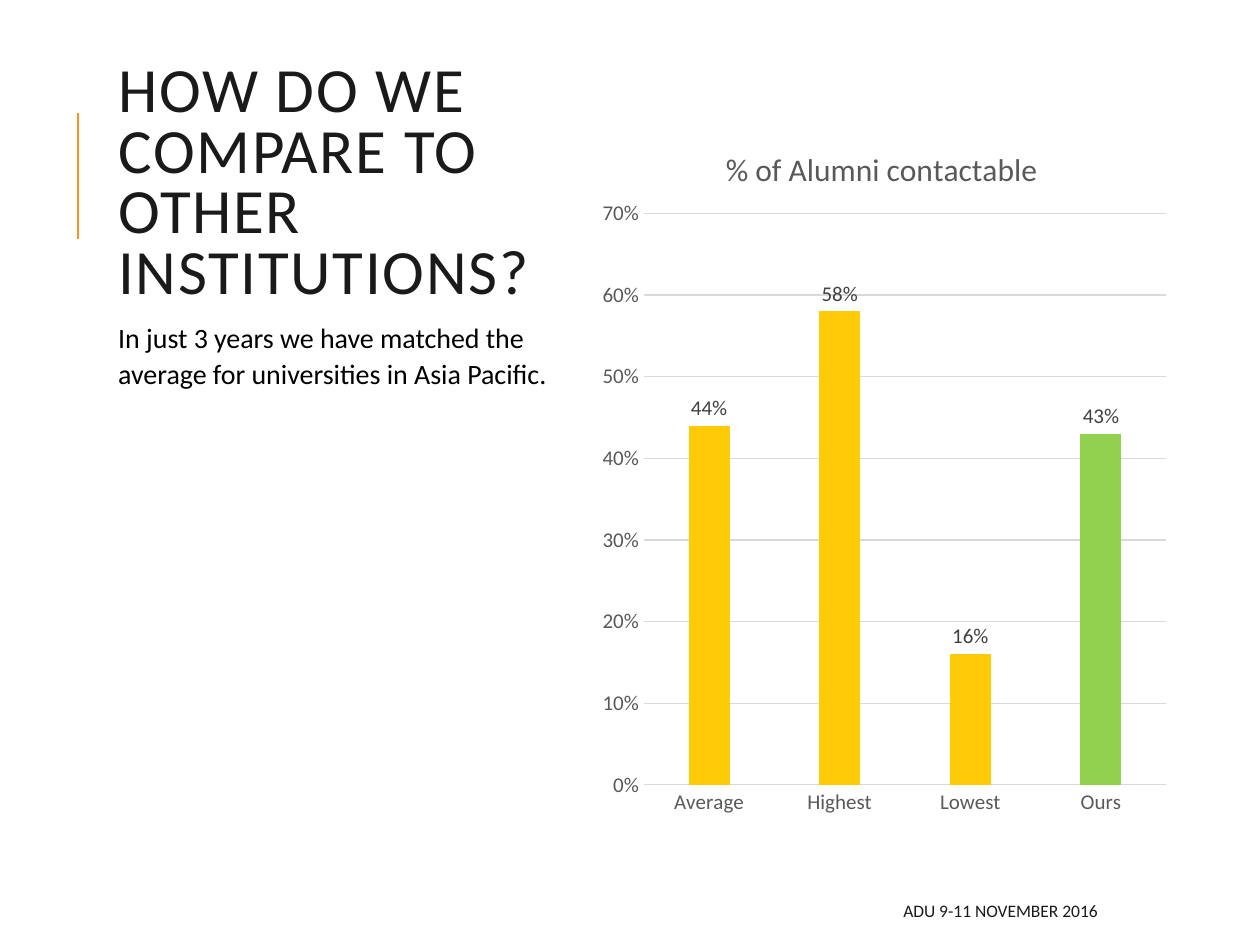
from pptx import Presentation
from pptx.chart.data import CategoryChartData
from pptx.dml.color import RGBColor
from pptx.enum.chart import XL_CHART_TYPE, XL_LABEL_POSITION, XL_TICK_MARK
from pptx.enum.shapes import MSO_CONNECTOR
from pptx.enum.text import MSO_ANCHOR, MSO_AUTO_SIZE, PP_ALIGN
from pptx.oxml import parse_xml
from pptx.oxml.ns import nsdecls, qn
from pptx.util import Inches, Pt

COLUMN = XL_CHART_TYPE.COLUMN_CLUSTERED
OUTSIDE_END = XL_LABEL_POSITION.OUTSIDE_END
NO_TICK = XL_TICK_MARK.NONE
STRAIGHT = MSO_CONNECTOR.STRAIGHT
TOP, MIDDLE = MSO_ANCHOR.TOP, MSO_ANCHOR.MIDDLE
LEFT, RIGHT = PP_ALIGN.LEFT, PP_ALIGN.RIGHT

THEME = {
    "font": "Calibri",
    "heading": RGBColor.from_string("1A1A1A"),
    "body": RGBColor.from_string("000000"),
    "muted": RGBColor.from_string("595959"),
    "label": RGBColor.from_string("404040"),
    "grid": RGBColor.from_string("D9D9D9"),
    "accent": RGBColor.from_string("F8931D"),
    "bar": RGBColor.from_string("FFCA08"),
    "highlight": RGBColor.from_string("92D050"),
    "title_size": 36,
    "body_size": 16,
    "footer_size": 10,
    "chart_title_size": 18,
    "chart_size": 12,
}


def write(tf, text, size, color, anchor=TOP, align=LEFT, line=1.0, before=0, after=0, tracking=0):
    tf.word_wrap = True
    tf.auto_size = MSO_AUTO_SIZE.NONE
    tf.vertical_anchor = anchor
    p = tf.paragraphs[0]
    p.alignment = align
    p.line_spacing = line
    p.space_before, p.space_after = Pt(before), Pt(after)
    r = p.add_run()
    r.text = text
    r.font.name, r.font.size, r.font.bold = THEME["font"], Pt(size), False
    r.font.color.rgb = color
    r._r.get_or_add_rPr().set("spc", str(tracking))


def place(element, index, **fractions):
    for old in element.findall(qn("c:layout")):
        element.remove(old)
    modes = "".join(f'<c:{k}Mode val="edge"/>' for k in "xy")
    sizes = "".join(f'<c:{k} val="{v}"/>' for k, v in fractions.items())
    target = '<c:layoutTarget val="inner"/>' if "w" in fractions else ""
    element.insert(index, parse_xml(
        f'<c:layout {nsdecls("c")}><c:manualLayout>{target}{modes}{sizes}</c:manualLayout></c:layout>'))


prs = Presentation()
prs.slide_width, prs.slide_height = Inches(10), Inches(7.5)
s = prs.slides.add_slide(prs.slide_layouts[5])

rule = s.shapes.add_connector(STRAIGHT, Inches(0.62), Inches(1.9), Inches(0.62), Inches(0.9))
rule.line.color.rgb = THEME["accent"]
rule.line.width = Pt(1.5)
rule._element.spPr.append(parse_xml(f'<a:effectLst {nsdecls("a")}/>'))

title = s.shapes.title
title.left, title.top, title.width, title.height = Inches(0.84), Inches(0.52), Inches(3.6), Inches(1.9)
write(title.text_frame, "HOW DO WE COMPARE TO OTHER INSTITUTIONS?", THEME["title_size"],
      THEME["heading"], anchor=MIDDLE, line=0.8, tracking=100)

data = CategoryChartData(number_format="0%")
data.categories = ["Average", "Highest", "Lowest", "Ours"]
data.add_series("Series 1", [0.44, 0.58, 0.16, 0.43])
chart = s.shapes.add_chart(COLUMN, Inches(4.69), Inches(0.9), Inches(4.66), Inches(5.67), data).chart
chart.has_legend = False
chart.font.name = THEME["font"]
chart.font.size = Pt(THEME["chart_size"])
chart.font.color.rgb = THEME["muted"]

chart.has_title = True
r = chart.chart_title.text_frame.paragraphs[0].add_run()
r.text = "% of Alumni contactable"
r.font.name, r.font.size, r.font.bold = THEME["font"], Pt(THEME["chart_title_size"]), False
r.font.color.rgb = THEME["muted"]
place(chart._chartSpace.chart.find(qn("c:title")), 1, x=0.22, y=0.04)
place(chart._chartSpace.chart.plotArea, 0, x=0.09, y=0.14, w=0.89, h=0.8)

for axis in (chart.category_axis, chart.value_axis):
    axis.major_tick_mark = axis.minor_tick_mark = NO_TICK
chart.category_axis.format.line.color.rgb = THEME["grid"]
chart.category_axis.format.line.width = Pt(0.75)
values = chart.value_axis
values.minimum_scale, values.maximum_scale, values.major_unit = 0, 0.7, 0.1
values.tick_labels.number_format = "0%"
values.tick_labels.number_format_is_linked = False
values.format.line.fill.background()
values.major_gridlines.format.line.color.rgb = THEME["grid"]
values.major_gridlines.format.line.width = Pt(0.75)

plot = chart.plots[0]
plot.gap_width, plot.overlap, plot.vary_by_categories = 219, -27, False
series = plot.series[0]
for bar, color in ((series, THEME["bar"]), (series.points[3], THEME["highlight"])):
    bar.format.fill.solid()
    bar.format.fill.fore_color.rgb = color
labels = series.data_labels
labels.show_value = True
labels.position = OUTSIDE_END
labels.number_format, labels.number_format_is_linked = "0%", False
labels.font.name, labels.font.size = THEME["font"], Pt(THEME["chart_size"])
labels.font.color.rgb = THEME["label"]

body = s.shapes.add_textbox(Inches(0.84), Inches(2.47), Inches(3.6), Inches(4.11))
write(body.text_frame, "In just 3 years we have matched the average for universities in Asia Pacific.",
      THEME["body_size"], THEME["body"], line=1.08, before=6, after=2)

footer = s.shapes.add_textbox(Inches(3.97), Inches(7.08), Inches(4.84), Inches(0.3))
write(footer.text_frame, "ADU 9-11 NOVEMBER 2016", THEME["footer_size"], THEME["heading"],
      anchor=MIDDLE, align=RIGHT)

prs.save("out.pptx")
